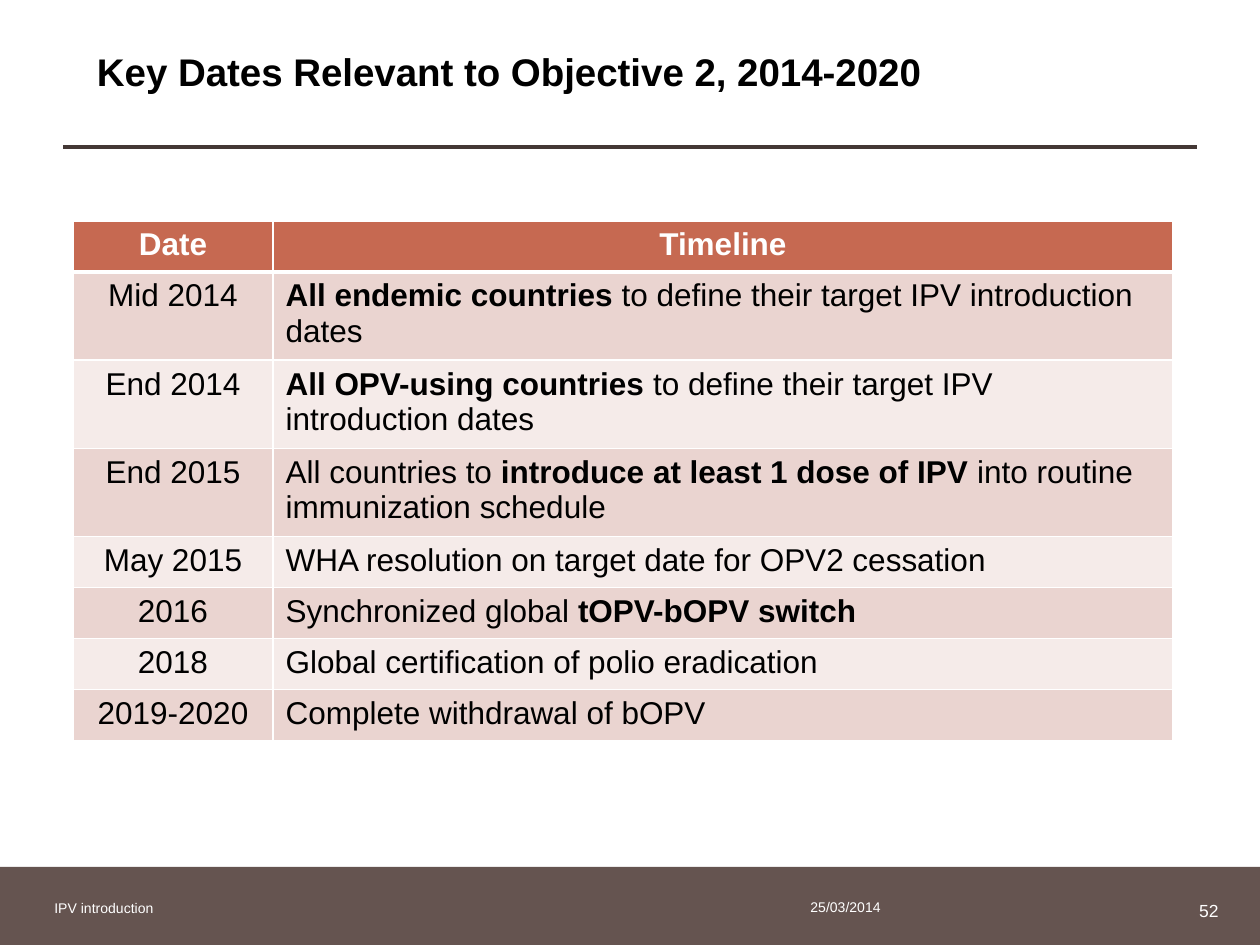
from dataclasses import dataclass

from lxml import etree
from pptx import Presentation
from pptx.dml.color import RGBColor
from pptx.enum import shapes, text
from pptx.oxml.ns import qn
from pptx.util import Pt

PX = 914400 / 126


@dataclass(frozen=True)
class Theme:
    font: str = "Arial"
    black: str = "000000"
    white: str = "FFFFFF"
    rule: str = "443835"
    footer: str = "655450"
    header: str = "C66951"
    bands: tuple = ("EAD4D0", "F5EBE9")
    title_size: int = 22
    table_size: int = 18
    number_size: int = 10
    footer_size: int = 8


THEME = Theme()
ALIGN = text.PP_ALIGN

HEADINGS = ("Date", "Timeline")
MILESTONES = [
    ("Mid 2014", [("All endemic countries ", True),
                  ("to define their target IPV introduction dates", False)], 83),
    ("End 2014", [("All OPV-using countries", True),
                  (" to define their target IPV introduction dates", False)], 83),
    ("End 2015", [("All countries to ", False),
                  ("introduce at least 1 dose of IPV ", True),
                  ("into routine immunization schedule", False)], 83),
    ("May 2015", [("WHA resolution on target date for OPV2 cessation", False)], 51),
    ("2016", [("Synchronized global ", False), ("tOPV-bOPV switch", True)], 51),
    ("2018", [("Global certification of polio eradication", False)], 51),
    ("2019-2020", [("Complete withdrawal of bOPV", False)], 51),
]


def px(*lengths):
    return [round(n * PX) for n in lengths]


def rgb(value):
    return RGBColor.from_string(value)


def style(p, size, color, align=ALIGN.LEFT, bold=None):
    p.alignment = align
    p.font.name = THEME.font
    p.font.size = Pt(size)
    p.font.color.rgb = rgb(color)
    p.font.bold = bold


def add_label(s, box, words, size, color=THEME.white, align=ALIGN.LEFT):
    tf = s.shapes.add_textbox(*px(*box)).text_frame
    tf.word_wrap = True
    tf.vertical_anchor = text.MSO_ANCHOR.MIDDLE
    p = tf.paragraphs[0]
    p.text = words
    style(p, size, color, align)
    return tf


def add_title(s, box, words):
    tf = add_label(s, box, words, THEME.title_size, THEME.black)
    tf.vertical_anchor = text.MSO_ANCHOR.TOP
    tf.margin_left = tf.margin_top = tf.margin_right = tf.margin_bottom = 0
    tf.paragraphs[0].line_spacing = 0.9
    tf.paragraphs[0].font.bold = True


def add_rule(s, ends):
    line = s.shapes.add_connector(shapes.MSO_CONNECTOR.STRAIGHT, *px(*ends))
    line.line.color.rgb = rgb(THEME.rule)
    line.line.width = Pt(2.25)
    etree.SubElement(line._element.spPr, qn("a:effectLst"))


def add_bar(s, box):
    sp = s.shapes.add_shape(shapes.MSO_SHAPE.RECTANGLE, *px(*box))
    sp.shadow.inherit = False
    sp.fill.solid()
    sp.fill.fore_color.rgb = rgb(THEME.footer)
    sp.line.fill.background()


def set_borders(cell, top, bottom):
    tc_pr = cell._tc.get_or_add_tcPr()
    for side, width in (("L", 1), ("R", 1), ("T", top), ("B", bottom)):
        ln = etree.SubElement(tc_pr, qn(f"a:ln{side}"), w=str(Pt(width)))
        fill = etree.SubElement(ln, qn("a:solidFill"))
        etree.SubElement(fill, qn("a:srgbClr"), val=THEME.white)


def fill_cell(cell, runs, fill, color, align, top=1, bottom=1):
    set_borders(cell, top, bottom)
    cell.fill.solid()
    cell.fill.fore_color.rgb = rgb(fill)
    p = cell.text_frame.paragraphs[0]
    style(p, THEME.table_size, color, align)
    for words, bold in runs:
        r = p.add_run()
        r.text = words
        r.font.bold = bold


def add_timeline(s, left, top, widths, header_height):
    heights = [header_height] + [height for _, _, height in MILESTONES]
    box = px(left, top, sum(widths), sum(heights))
    table = s.shapes.add_table(len(heights), len(widths), *box).table
    for column, width in zip(table.columns, px(*widths)):
        column.width = width
    for row, height in zip(table.rows, px(*heights)):
        row.height = height
    for col, heading in enumerate(HEADINGS):
        fill_cell(table.cell(0, col), [(heading, True)], THEME.header,
                  THEME.white, ALIGN.CENTER, bottom=3)
    for row, (date, event, _) in enumerate(MILESTONES, 1):
        band = THEME.bands[(row - 1) % 2]
        top_width = 3 if row == 1 else 1
        fill_cell(table.cell(row, 0), [(date, False)], band,
                  THEME.black, ALIGN.CENTER, top_width)
        fill_cell(table.cell(row, 1), event, band,
                  THEME.black, ALIGN.LEFT, top_width)


def main():
    prs = Presentation()
    prs.slide_width, prs.slide_height = px(1260, 945)
    s = prs.slides.add_slide(prs.slide_layouts[6])
    add_rule(s, (63, 147, 1197, 147))
    add_bar(s, (0, 867, 1260, 78))
    add_title(s, (97, 53, 1100, 53), "Key Dates Relevant to Objective 2, 2014-2020")
    add_label(s, (798, 882, 420, 50), "25/03/2014", THEME.footer_size)
    add_label(s, (42, 883, 494, 50), "IPV introduction", THEME.footer_size)
    add_label(s, (1130, 892, 101, 38), "52", THEME.number_size, align=ALIGN.RIGHT)
    add_timeline(s, 73, 221, (200, 900), 51)
    prs.save("out.pptx")


if __name__ == "__main__":
    main()
